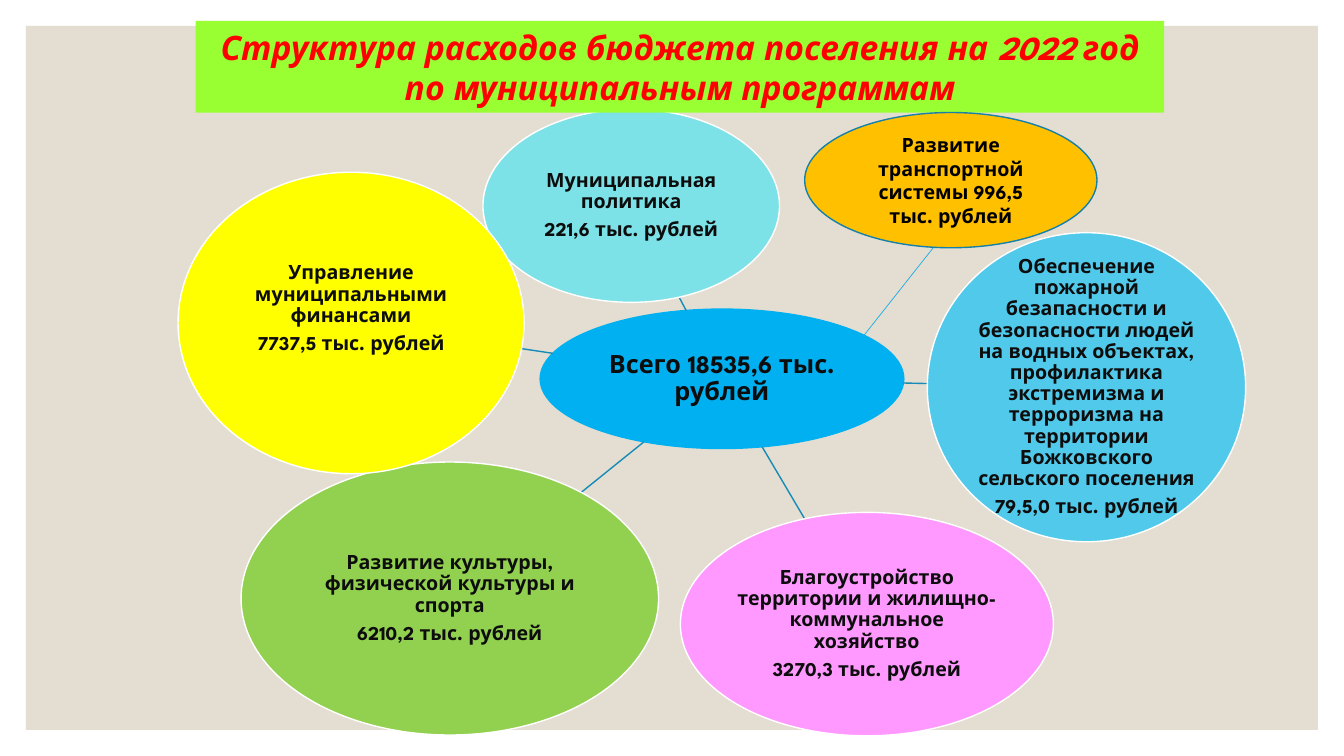
import math
from dataclasses import dataclass

import pptx
import pptx.dml.color
import pptx.enum.shapes
import pptx.enum.text
import pptx.oxml.ns
import pptx.util
from lxml import etree

# The slide is a grid of 160 columns by 90 rows
WIDTH, HEIGHT = pptx.util.Inches(13.333), pptx.util.Inches(7.5)
COLUMN, ROW = WIDTH / 160, HEIGHT / 90
FONT = "League Spartan"
COLORS = {
    "backdrop": "E3DED1", "hub": "00B0F0", "ink": "0D0D0D", "black": "000000",
    "white": "FFFFFF", "spoke": "168BB7", "politics": "7DE2E7",
    "culture": "92D050", "finance": "FFFF00", "safety": "51C9EA",
    "landscaping": "FF99FF", "transport": "FFC000", "transport edge": "1580A9",
    "transport spoke": "1CADE4", "banner": "99FF33", "heading": "FF0000",
}


@dataclass(frozen=True)
class Oval:
    left: float
    top: float
    columns: float
    rows: float
    fill: str
    lines: tuple[str, ...]
    edge: str = "white"
    ink: str = "ink"
    size: int = 14
    line_spacing: float = 0.9
    space_after: float = 0.35  # share of the text size
    inset: float = 0.01        # inches
    raise_by: float = 0        # extra bottom inset, inches

    def center(self) -> tuple[float, float]:
        return self.left + self.columns / 2, self.top + self.rows / 2

    def rim_towards(self, other: "Oval") -> tuple[float, float]:
        """Point of the outline on the way to another oval's center."""
        (x, y), (other_x, other_y) = self.center(), other.center()
        dx, dy = other_x - x, other_y - y
        reach = math.hypot(dx / (self.columns / 2), dy / (self.rows / 2))
        return x + dx / reach, y + dy / reach


HUB = Oval(64.3, 36.8, 43.3, 16.6, "hub", ("Всего 18535,6 тыс. рублей",),
           edge="hub", size=18)
PROGRAMS = (
    Oval(57.5, 13, 35.3, 23, "politics",
         ("Муниципальная политика", "221,6 тыс. рублей")),
    Oval(28.7, 55, 49.7, 32.5, "culture",
         ("Развитие культуры, физической культуры и спорта",
          "6210,2 тыс. рублей")),
    Oval(21.2, 20.5, 41.2, 35.9, "finance",
         ("Управление муниципальными финансами", "7737,5 тыс. рублей"),
         raise_by=0.28),
    Oval(110.4, 27.7, 37.9, 36.8, "safety",
         ("Обеспечение пожарной безапасности и безопасности людей на водных "
          "объектах, профилактика экстремизма и терроризма на территории "
          "Божковского сельского поселения", "79,5,0 тыс. рублей")),
    Oval(81, 61, 44.4, 26.6, "landscaping",
         ("Благоустройство территории и жилищно-коммунальное хозяйство",
          "3270,3 тыс. рублей")),
)
TRANSPORT = Oval(95.8, 13.4, 34.8, 16.1, "transport",
                 ("Развитие транспортной системы 996,5 тыс. рублей",),
                 edge="transport edge", ink="black", line_spacing=1,
                 space_after=0, inset=0.1)


def rgb(name: str) -> pptx.dml.color.RGBColor:
    return pptx.dml.color.RGBColor.from_string(COLORS[name])


def place(left: float, top: float, columns: float, rows: float) -> tuple[int, ...]:
    return (round(left * COLUMN), round(top * ROW),
            round(columns * COLUMN), round(rows * ROW))


def format_text(frame, size: int, color: str, italic: bool = False) -> None:
    frame.word_wrap = True
    frame.auto_size = pptx.enum.text.MSO_AUTO_SIZE.NONE
    frame.vertical_anchor = pptx.enum.text.MSO_ANCHOR.MIDDLE
    for paragraph in frame.paragraphs:
        paragraph.alignment = pptx.enum.text.PP_ALIGN.CENTER
        for run in paragraph.runs:
            run.font.name, run.font.size = FONT, pptx.util.Pt(size)
            run.font.bold, run.font.italic = True, italic
            run.font.color.rgb = rgb(color)


def draw_oval(slide, oval: Oval) -> None:
    ellipse = slide.shapes.add_shape(
        pptx.enum.shapes.MSO_SHAPE.OVAL,
        *place(oval.left, oval.top, oval.columns, oval.rows))
    ellipse.shadow.inherit = False
    ellipse.fill.solid()
    ellipse.fill.fore_color.rgb = rgb(oval.fill)
    ellipse.line.color.rgb = rgb(oval.edge)
    ellipse.line.width = pptx.util.Pt(1)
    frame = ellipse.text_frame
    frame.text = "\n".join(oval.lines)
    frame.margin_left = frame.margin_right = frame.margin_top = (
        pptx.util.Inches(oval.inset))
    frame.margin_bottom = pptx.util.Inches(oval.inset + oval.raise_by)
    format_text(frame, oval.size, oval.ink)
    for paragraph in frame.paragraphs:
        paragraph.line_spacing = oval.line_spacing
        paragraph.space_after = pptx.util.Pt(oval.size * oval.space_after)


def draw_spoke(slide, start: tuple[float, float], end: tuple[float, float],
               color: str, width: float) -> None:
    spoke = slide.shapes.add_connector(
        pptx.enum.shapes.MSO_CONNECTOR.STRAIGHT, *place(*start, *end))
    spoke.line.color.rgb = rgb(color)
    spoke.line.width = pptx.util.Pt(width)
    etree.SubElement(spoke.element.spPr, pptx.oxml.ns.qn("a:effectLst"))


def main() -> None:
    deck = pptx.Presentation()
    deck.slide_width, deck.slide_height = WIDTH, HEIGHT
    slide = deck.slides.add_slide(deck.slide_layouts[5])

    # Backdrop
    backdrop = slide.shapes.add_shape(
        pptx.enum.shapes.MSO_SHAPE.RECTANGLE, *place(3.1, 3.1, 153.8, 83.8))
    backdrop.shadow.inherit = False
    backdrop.fill.solid()
    backdrop.fill.fore_color.rgb = rgb("backdrop")
    backdrop.line.fill.background()

    # Total in the middle, programs around it
    draw_oval(slide, HUB)
    for program in PROGRAMS:
        draw_spoke(slide, HUB.rim_towards(program), program.rim_towards(HUB),
                   "spoke", 1)
        draw_oval(slide, program)

    # Heading, brought in front of the ovals
    heading = slide.shapes.title
    heading.left, heading.top, heading.width, heading.height = place(
        23.3, 2.5, 115.3, 10.9)
    heading.fill.solid()
    heading.fill.fore_color.rgb = rgb("banner")
    heading.text_frame.text = ("Структура расходов бюджета поселения на 2022 год "
                               "по муниципальным программам")
    format_text(heading.text_frame, 24, "heading", italic=True)
    slide.shapes.element.append(heading.element)

    # Transport program
    draw_spoke(slide, (102.8, 40), (111.1, 29.5), "transport spoke", 0.5)
    draw_oval(slide, TRANSPORT)

    deck.save("out.pptx")


if __name__ == "__main__":
    main()
